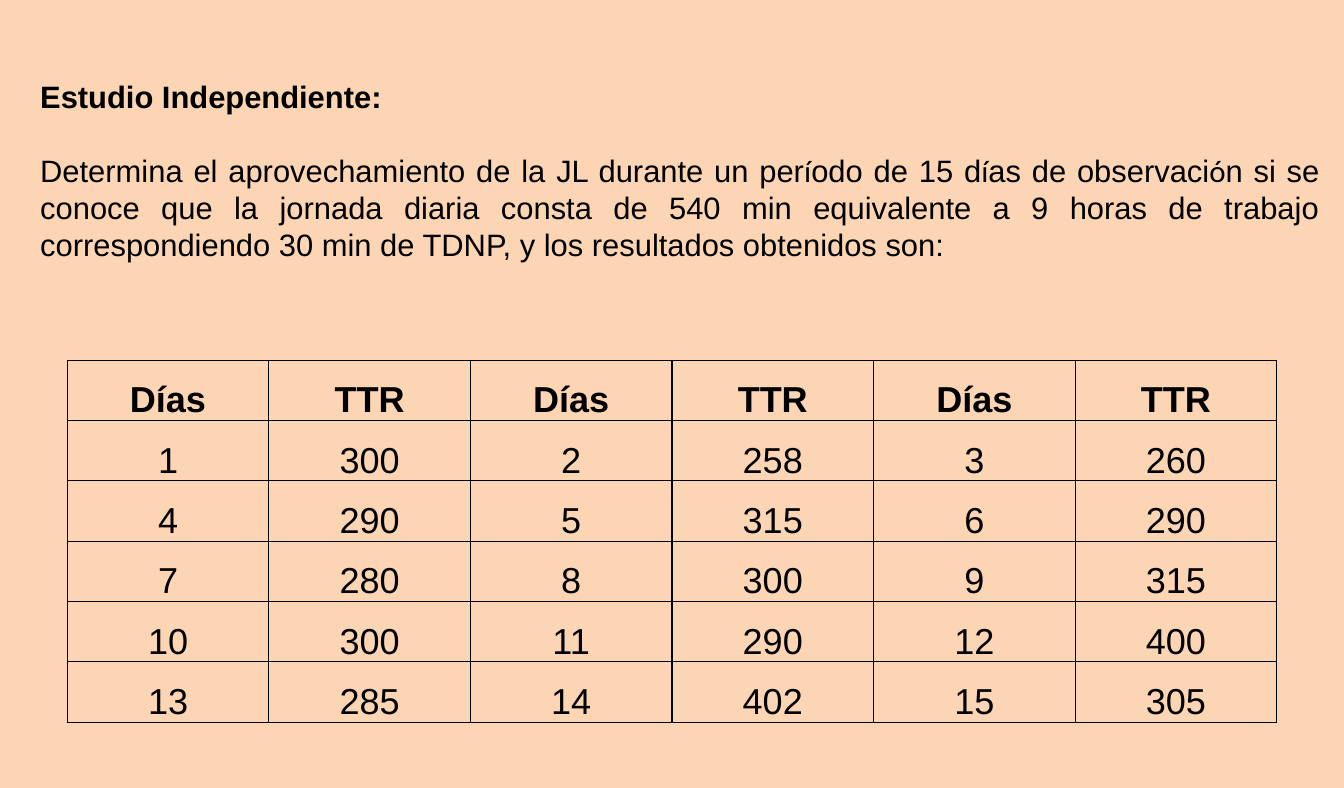
from itertools import groupby

from lxml import etree
from pptx import Presentation
from pptx.dml.color import RGBColor
from pptx.enum.text import MSO_ANCHOR, PP_ALIGN
from pptx.oxml.ns import qn
from pptx.util import Pt

TOP, MIDDLE = MSO_ANCHOR.TOP, MSO_ANCHOR.MIDDLE
CENTER, JUSTIFY = PP_ALIGN.CENTER, PP_ALIGN.JUSTIFY

HEAD = "Estudio Independiente:"
TASK = (
    "Determina el aprovechamiento de la JL durante un período de 15 días de "
    "observación si se conoce que la jornada diaria consta de 540 min "
    "equivalente a 9 horas de trabajo correspondiendo 30 min de TDNP, y los "
    "resultados obtenidos son:"
)
TIMES = [300, 258, 260, 290, 315, 290, 280, 300, 315, 300, 290, 400, 285, 402, 305]
PAIRS = 3


def color(value):
    return RGBColor.from_string(value)


def apply(item, values):
    for name, value in values.items():
        setattr(item, name, value)


class Deck:
    ink = "000000"
    paper = "FCD5B5"
    face = "Arial"
    accent = "Calibri"

    def __init__(self, width, height):
        self.file = Presentation()
        apply(self.file, {"slide_width": Pt(width), "slide_height": Pt(height)})
        self.slide = self.file.slides.add_slide(self.file.slide_layouts[1])
        fill = self.slide.background.fill
        fill.solid()
        fill.fore_color.rgb = color(self.paper)

    def text(self, para, words, size, bold, face=None):
        run = para.add_run()
        run.text = words
        apply(run.font, {"size": Pt(size), "bold": bold, "name": face or self.face})
        run.font.color.rgb = color(self.ink)

    def place(self, index, box):
        shape = self.slide.placeholders[index]
        apply(shape, dict(zip(("left", "top", "width", "height"), map(Pt, box))))
        frame = shape.text_frame
        apply(frame, {"word_wrap": True, "vertical_anchor": TOP})
        para = frame.paragraphs[0]
        apply(para, {"alignment": JUSTIFY, "space_before": Pt(0)})
        return para

    def title(self, words, box):
        self.text(self.place(0, box), words, 24, True)

    def body(self, words, box):
        para = self.place(1, box)
        props = para._p.get_or_add_pPr()
        props.set("marL", "0")
        props.set("indent", "0")
        etree.SubElement(props, qn("a:buNone"))
        for marked, chars in groupby(words, lambda char: char in "íó"):
            face = self.accent if marked else self.face
            self.text(para, "".join(chars), 24, False, face)

    def border(self, cell):
        props = cell._tc.get_or_add_tcPr()
        for place, side in enumerate("LRTB"):
            line = etree.Element(qn("a:ln" + side), w=str(Pt(1)))
            fill = etree.SubElement(line, qn("a:solidFill"))
            etree.SubElement(fill, qn("a:srgbClr"), val=self.ink)
            props.insert(place, line)

    def cell(self, cell, words, head):
        apply(cell, {
            "margin_left": Pt(5), "margin_right": Pt(5),
            "margin_top": 0, "margin_bottom": 0,
            "vertical_anchor": MIDDLE if head else TOP,
        })
        cell.fill.solid()
        cell.fill.fore_color.rgb = color(self.paper)
        self.border(cell)
        para = cell.text_frame.paragraphs[0]
        apply(para, {"alignment": CENTER, "line_spacing": 1.5})
        self.text(para, words, 28, head)

    def table(self, rows, box):
        shape = self.slide.shapes.add_table(len(rows), len(rows[0]), *map(Pt, box))
        table = shape.table
        apply(table, {"first_row": False, "horz_banding": False})
        for r, row in enumerate(rows):
            for c, words in enumerate(row):
                self.cell(table.cell(r, c), words, r == 0)


def main():
    deck = Deck(1044, 612)
    deck.title(HEAD, (24, 56.4, 1008, 36))
    deck.body(TASK, (24, 114, 1008, 96))
    rows = [["Días", "TTR"] * PAIRS]
    for start in range(0, len(TIMES), PAIRS):
        days = enumerate(TIMES[start:start + PAIRS], start + 1)
        rows.append([str(value) for pair in days for value in pair])
    deck.table(rows, (52.2, 279.8, 939.6, 280.8))
    deck.file.save("out.pptx")


if __name__ == "__main__":
    main()
